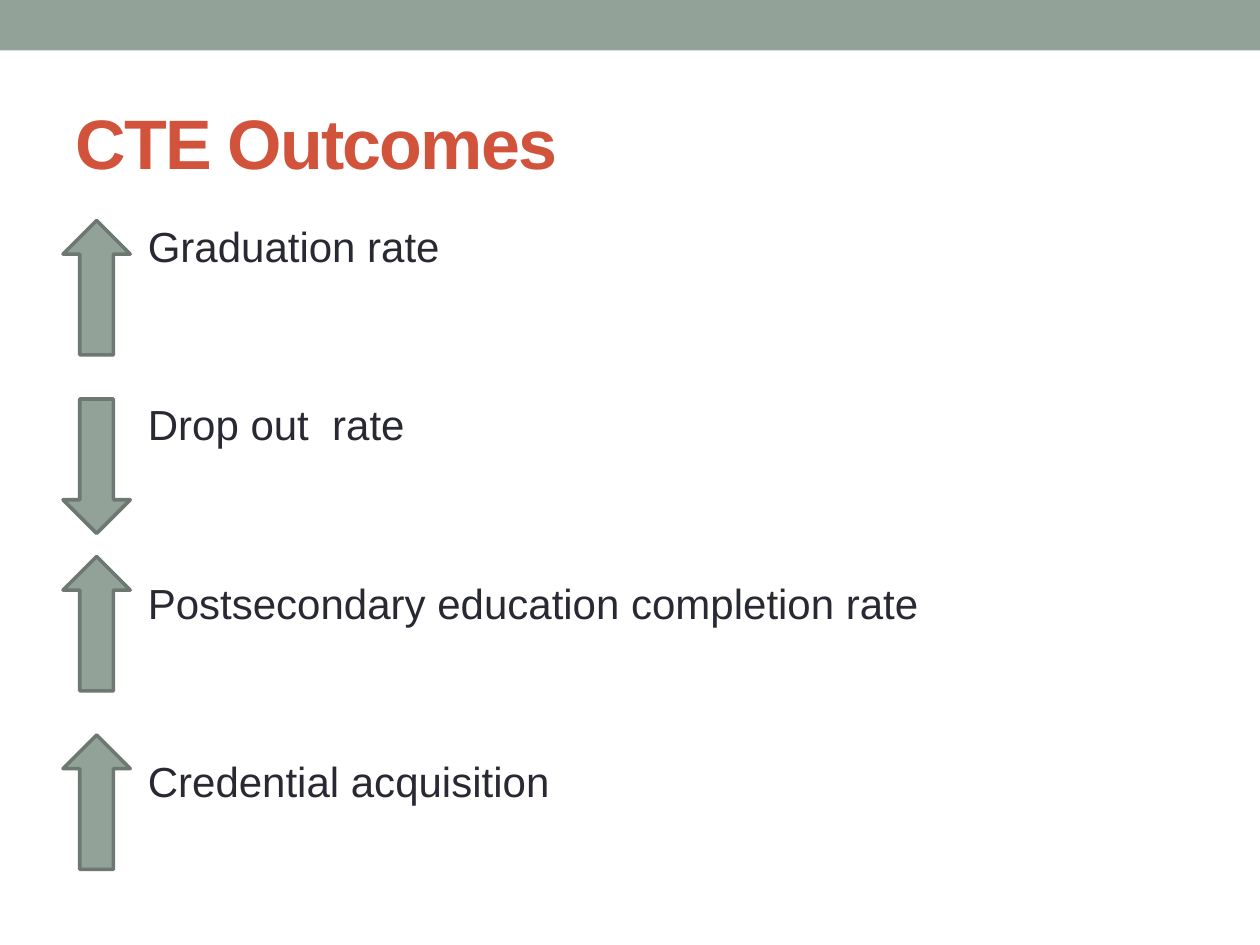
import pptx
import pptx.util
import pptx.dml.color
import pptx.enum.shapes
import pptx.enum.text

Pt = pptx.util.Pt
ARROW = pptx.enum.shapes.MSO_SHAPE
COLORS = {"sage": "93A299", "edge": "6D7871", "title": "D2533C", "body": "292934"}


def rgb(name):
    return pptx.dml.color.RGBColor.from_string(COLORS[name])


def style(paragraph, size, color):
    font = paragraph.runs[0].font
    font.name = "Arial"
    font.size = Pt(size)
    font.color.rgb = rgb(color)
    return font


deck = pptx.Presentation()
deck.slide_width, deck.slide_height = Pt(720), Pt(540)
slide = deck.slides.add_slide(deck.slide_layouts[6])
shapes = slide.shapes

band = shapes.add_shape(ARROW.RECTANGLE, 0, 0, Pt(720), Pt(28.8))
band.shadow.inherit = False
band.fill.solid()
band.fill.fore_color.rgb = rgb("sage")
band.line.fill.background()

heading = shapes.add_textbox(Pt(36), Pt(42), Pt(648), Pt(78)).text_frame
heading.word_wrap = True
heading.vertical_anchor = pptx.enum.text.MSO_ANCHOR.MIDDLE
heading.text = "CTE Outcomes"
heading_font = style(heading.paragraphs[0], 40, "title")
heading_font.bold = True
heading.paragraphs[0].runs[0]._r.get_or_add_rPr().set("spc", "-100")

outcomes = [
    ("Graduation rate", ARROW.UP_ARROW, 126),
    ("Drop out  rate", ARROW.DOWN_ARROW, 228),
    ("Postsecondary education completion rate", ARROW.UP_ARROW, 318),
    ("Credential acquisition", ARROW.UP_ARROW, 420),
]

outcome_list = shapes.add_textbox(Pt(37.5), Pt(120), Pt(648), Pt(402)).text_frame
outcome_list.word_wrap = True
outcome_list.margin_left = Pt(47)
outcome_list.margin_top = Pt(6)
outcome_list.text = "\n".join(label for label, _, _ in outcomes)
for outcome in outcome_list.paragraphs:
    outcome.space_after = Pt(73.2)
    style(outcome, 24, "body")

for _, direction, top in outcomes:
    trend = shapes.add_shape(direction, Pt(36), Pt(top), Pt(38.4), Pt(76.8))
    trend.shadow.inherit = False
    trend.fill.solid()
    trend.fill.fore_color.rgb = rgb("sage")
    trend.line.color.rgb = rgb("edge")
    trend.line.width = Pt(2.08)

deck.save("out.pptx")
